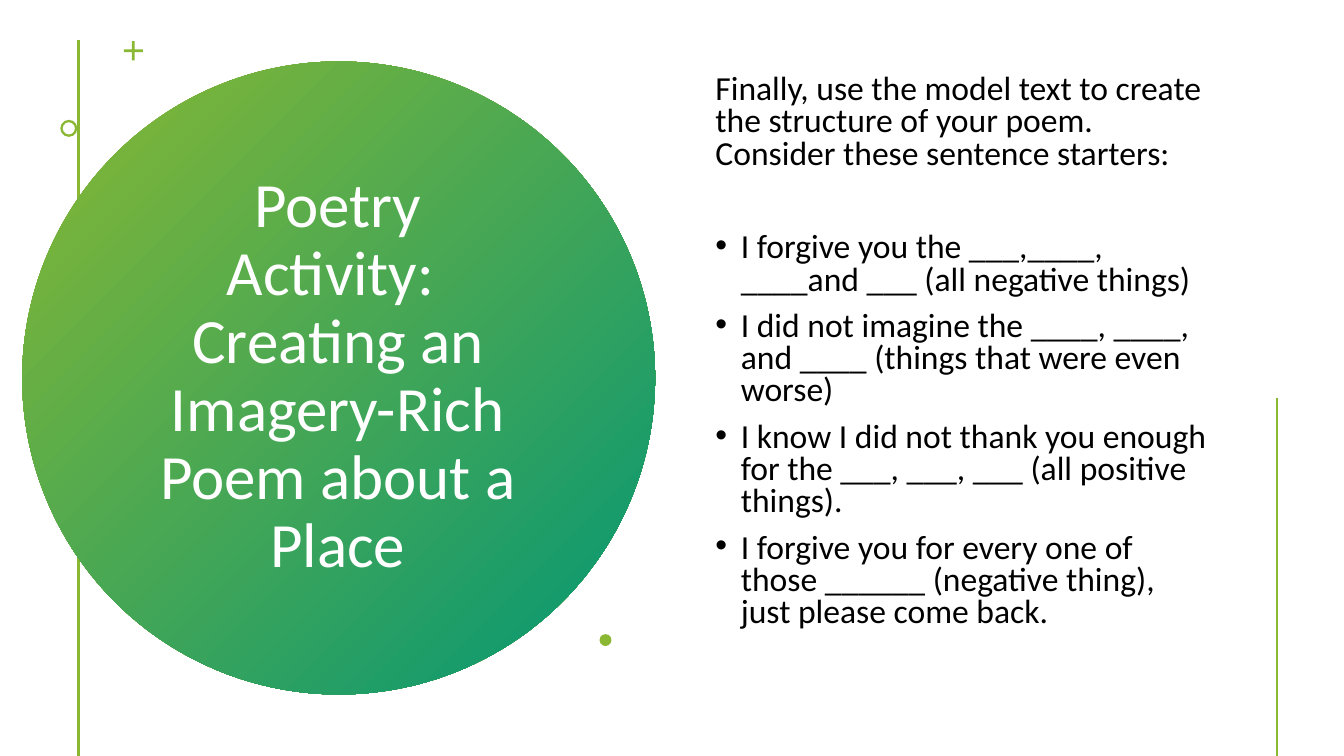
import dataclasses

import lxml.etree
import pptx
import pptx.dml.color
import pptx.enum.shapes
import pptx.enum.text
import pptx.oxml.ns
import pptx.util

Cm = pptx.util.Cm
Pt = pptx.util.Pt
Shape = pptx.enum.shapes.MSO_SHAPE
Align = pptx.enum.text.PP_ALIGN
qn = pptx.oxml.ns.qn


@dataclasses.dataclass(frozen=True)
class Theme:
    """Colours, font and type sizes of the deck."""
    lime: str = "8AB833"
    teal: str = "029676"
    white: str = "FFFFFF"
    black: str = "000000"
    font: str = "Calibri"
    head: float = 45
    body: float = 24
    gap: float = 10
    rule: float = 2


@dataclasses.dataclass(frozen=True)
class Box:
    """A region in centimetres."""
    x: float
    y: float
    w: float
    h: float

    def inner(self, x, y, w, h):
        """Return a box placed relative to this one."""
        return Box(self.x + x, self.y + y, w, h)

    def emu(self):
        """Return left, top, width and height as lengths."""
        return [Cm(v) for v in (self.x, self.y, self.w, self.h)]


THEME = Theme()
TITLE = "Poetry Activity: \vCreating an Imagery-Rich Poem about a Place"
INTRO = ("Finally, use the model text to create the structure of your poem. "
         "Consider these sentence starters:")
STARTS = [
    "I forgive you the ___,____, ____and ___ (all negative things)",
    "I did not imagine the ____, ____, and ____ (things that were even worse)",
    "I know I did not thank you enough for the ___, ___, ___ (all positive things).",
    "I forgive you for every one of those ______ (negative thing), "
    "just please come back.",
]


def tint(name):
    """Turn a hex string into a colour."""
    return pptx.dml.color.RGBColor.from_string(name)


def add_mark(slide, kind, box, adjust=None):
    """Add a plain lime shape without outline or shadow."""
    mark = slide.shapes.add_shape(kind, *box.emu())
    mark.shadow.inherit = False
    mark.line.fill.background()
    mark.fill.solid()
    mark.fill.fore_color.rgb = tint(THEME.lime)
    if adjust is not None:
        mark.adjustments[0] = adjust
    return mark


def add_rule(slide, x, top, end):
    """Add a vertical lime line."""
    rule = slide.shapes.add_connector(
        pptx.enum.shapes.MSO_CONNECTOR.STRAIGHT, Cm(x), Cm(top), Cm(x), Cm(end))
    rule.line.color.rgb = tint(THEME.lime)
    rule.line.width = Pt(THEME.rule)
    lxml.etree.SubElement(rule._element.spPr, qn("a:effectLst"))


def add_text(slide, box, lines, size, color, pitch):
    """Add a wrapped, vertically centred text box and return its paragraphs."""
    frame = slide.shapes.add_textbox(*box.emu()).text_frame
    frame.word_wrap = True
    frame.vertical_anchor = pptx.enum.text.MSO_ANCHOR.MIDDLE
    frame.text = "\n".join(lines)
    for para in frame.paragraphs:
        para.line_spacing = pitch
        for run in para.runs:
            run.font.name = THEME.font
            run.font.size = Pt(size)
            run.font.color.rgb = tint(color)
    return frame.paragraphs


def add_bullet(para):
    """Give a paragraph a bullet and a hanging indent."""
    props = para._p.get_or_add_pPr()
    props.set("marL", str(Cm(0.64)))
    props.set("indent", str(-Cm(0.64)))
    font = lxml.etree.SubElement(props, qn("a:buFont"))
    font.set("typeface", "Arial")
    lxml.etree.SubElement(props, qn("a:buChar")).set("char", "•")


def draw_title(slide, box):
    """Draw the gradient disc, its title and the small ornaments."""
    add_rule(slide, box.x + 1.98, box.y + 1, box.y + box.h)
    disc = add_mark(slide, Shape.OVAL, box.inner(0.56, 1.55, 15.95, 15.95))
    disc.fill.gradient()
    disc.fill.gradient_angle = 315
    for stop, color in zip(disc.fill.gradient_stops, (THEME.lime, THEME.teal)):
        stop.color.rgb = tint(color)
    title = add_text(slide, box.inner(3.45, 3.58, 10.13, 11.86), [TITLE],
                     THEME.head, THEME.white, 0.9)
    title[0].alignment = Align.CENTER
    add_mark(slide, Shape.CROSS, box.inner(3.12, 1.04, 0.48, 0.48), 0.43)
    add_mark(slide, Shape.DONUT, box.inner(1.52, 3.02, 0.43, 0.43), 0.14)
    add_mark(slide, Shape.OVAL, box.inner(15.11, 15.98, 0.3, 0.3))


def draw_body(slide, box):
    """Draw the introduction, the sentence starters and the right rule."""
    paras = add_text(slide, box.inner(0.85, 1.07, 13, 15.62), [INTRO, *STARTS],
                     THEME.body, THEME.black, 0.8)
    for para in paras:
        para.alignment = Align.LEFT
        para.space_before = Pt(THEME.gap)
    for para in paras[1:]:
        add_bullet(para)
    paras[1].space_before = Pt(2 * THEME.gap + THEME.body)
    add_rule(slide, box.x + 15.25, box.y + 10.03, box.y + box.h)


def main():
    """Build and save the deck."""
    deck = pptx.Presentation()
    deck.slide_width, deck.slide_height = Cm(33.87), Cm(19.05)
    slide = deck.slides.add_slide(deck.slide_layouts[6])
    draw_title(slide, Box(0, 0, 16.93, 19.05))
    draw_body(slide, Box(16.93, 0, 16.94, 19.05))
    deck.save("out.pptx")


if __name__ == "__main__":
    main()
